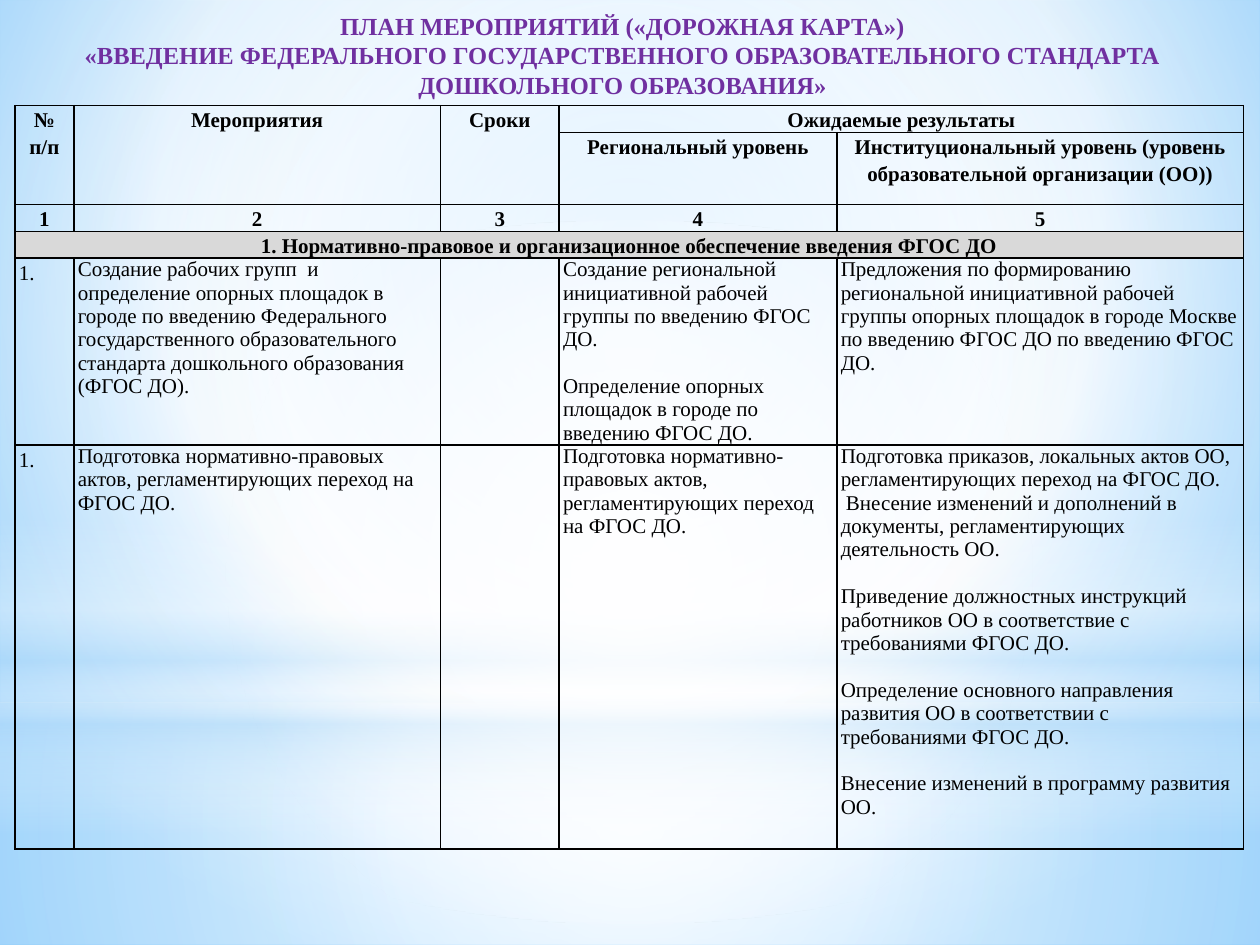
from lxml import etree
from pptx import Presentation
from pptx.dml.color import RGBColor
from pptx.enum.shapes import MSO_SHAPE
from pptx.enum.text import MSO_ANCHOR, PP_ALIGN
from pptx.oxml.ns import qn
from pptx.util import Cm, Pt

CENTER, LEFT = PP_ALIGN.CENTER, PP_ALIGN.LEFT
MIDDLE = MSO_ANCHOR.MIDDLE
RECTANGLE, OVAL = MSO_SHAPE.RECTANGLE, MSO_SHAPE.OVAL
BLACK = RGBColor(0x00, 0x00, 0x00)
WHITE = RGBColor(0xFF, 0xFF, 0xFF)
PURPLE = RGBColor(0x70, 0x30, 0xA0)
GREY = RGBColor(0xD9, 0xD9, 0xD9)
PALE_BLUE = RGBColor(0xB4, 0xDC, 0xFA)
SKY_BLUE = RGBColor(0x9E, 0xD5, 0xFF)
DEEP_BLUE = RGBColor(0x5B, 0xB9, 0xFF)
FONT = "Times New Roman"

COLUMN_WIDTHS = [1.19, 7.39, 2.39, 5.6, 8.2]
ROW_HEIGHTS = [0.53, 1.45, 0.53, 0.53, 3.75, 8.14]
MERGES = [(0, 0, 1, 0), (0, 1, 1, 1), (0, 2, 1, 2), (0, 3, 0, 4), (3, 0, 3, 4)]
PARAGRAPH_GAP = 13.5

TITLE = [
    "ПЛАН МЕРОПРИЯТИЙ («ДОРОЖНАЯ КАРТА»)",
    "«ВВЕДЕНИЕ ФЕДЕРАЛЬНОГО ГОСУДАРСТВЕННОГО ОБРАЗОВАТЕЛЬНОГО СТАНДАРТА",
    "ДОШКОЛЬНОГО ОБРАЗОВАНИЯ»",
]
HEADER_ROWS = [
    ["№ п/п", "Мероприятия", "Сроки", "Ожидаемые результаты", ""],
    ["", "", "", "Региональный уровень",
     "Институциональный уровень (уровень образовательной организации (ОО))"],
    ["1", "2", "3", "4", "5"],
    ["1. Нормативно-правовое и организационное обеспечение введения ФГОС ДО",
     "", "", "", ""],
]
ACTS = "Подготовка нормативно-правовых актов, регламентирующих переход на ФГОС ДО."
BODY_ROWS = [
    [["1."],
     ["Создание рабочих групп  и определение опорных площадок в городе по введению "
      "Федерального государственного образовательного стандарта дошкольного "
      "образования (ФГОС ДО)."],
     [],
     ["Создание региональной инициативной рабочей группы по введению ФГОС ДО.",
      "Определение опорных площадок в городе по введению ФГОС ДО."],
     ["Предложения по формированию региональной инициативной рабочей группы опорных "
      "площадок в городе Москве по введению ФГОС ДО по введению ФГОС ДО."]],
    [["1."], [ACTS], [], [ACTS],
     ["Подготовка приказов, локальных актов ОО, регламентирующих переход на ФГОС ДО.",
      " Внесение изменений и дополнений в документы, регламентирующих "
      "деятельность ОО.",
      "Приведение должностных инструкций работников ОО в соответствие с "
      "требованиями ФГОС ДО.",
      "Определение основного направления развития ОО в соответствии с "
      "требованиями ФГОС ДО.",
      "Внесение изменений в программу развития ОО."]],
]


def set_gradient(fill, element, stops, focus=None):
    fill.solid()
    solid = next(element.iter(qn("a:solidFill")))
    gradient = etree.Element(qn("a:gradFill"), rotWithShape="1")
    stop_list = etree.SubElement(gradient, qn("a:gsLst"))
    for position, color, opacity in stops:
        stop = etree.SubElement(stop_list, qn("a:gs"), pos=str(position * 1000))
        tint = etree.SubElement(stop, qn("a:srgbClr"), val=str(color))
        etree.SubElement(tint, qn("a:alpha"), val=str(opacity * 1000))
    if focus:
        shade = etree.SubElement(gradient, qn("a:path"), path="circle")
        sides = {side: str(share * 1000) for side, share in zip("ltrb", focus)}
        etree.SubElement(shade, qn("a:fillToRect"), **sides)
    else:
        etree.SubElement(gradient, qn("a:lin"), ang="5400000", scaled="0")
    solid.getparent().replace(solid, gradient)


def add_glow(page, kind, top, height, stops, focus=None):
    glow = page.shapes.add_shape(kind, Cm(0), Cm(top), Cm(25.4), Cm(height))
    glow.shadow.inherit = False
    glow.line.fill.background()
    set_gradient(glow.fill, glow._element.spPr, stops, focus)


def add_backdrop(page):
    center = (50, 50, 50, 50)
    set_gradient(page.background.fill, page._element,
                 [(0, SKY_BLUE, 100), (60, WHITE, 100), (100, DEEP_BLUE, 100)],
                 (20, 10, 20, 60))
    add_glow(page, RECTANGLE, 14.17, 4.88,
             [(0, WHITE, 91), (37, WHITE, 76), (100, PALE_BLUE, 79)], center)
    add_glow(page, RECTANGLE, 0, 14.17,
             [(0, WHITE, 89), (48, WHITE, 62), (100, PALE_BLUE, 79)], center)
    add_glow(page, RECTANGLE, 10.46, 6.35,
             [(0, WHITE, 0), (29, WHITE, 30), (45, PALE_BLUE, 40),
              (55, WHITE, 26), (65, PALE_BLUE, 60), (100, WHITE, 0)])
    add_glow(page, OVAL, 4.45, 14.17, [(0, WHITE, 100), (56, WHITE, 0)], center)


def style_paragraph(para, size, color, bold, align):
    para.alignment = align
    para.font.name = FONT
    para.font.size = Pt(size)
    para.font.bold = bold
    para.font.color.rgb = color


def add_title(page):
    box = page.shapes.add_textbox(Cm(0), Cm(0.08), Cm(25.1), Cm(2.06))
    frame = box.text_frame
    frame.word_wrap = True
    frame.vertical_anchor = MIDDLE
    frame.text = "\n".join(TITLE)
    for para in frame.paragraphs:
        style_paragraph(para, 14, PURPLE, True, CENTER)


def set_borders(cell):
    properties = cell._tc.get_or_add_tcPr()
    for side in ("a:lnL", "a:lnR", "a:lnT", "a:lnB"):
        line = etree.SubElement(properties, qn(side), w=str(Pt(1)))
        fill = etree.SubElement(line, qn("a:solidFill"))
        etree.SubElement(fill, qn("a:srgbClr"), val=str(BLACK))


def prepare_cell(cell):
    cell.margin_left = cell.margin_right = Cm(0.08)
    cell.margin_top = cell.margin_bottom = 0
    set_borders(cell)
    cell.fill.background()
    style_paragraph(cell.text_frame.paragraphs[0], 12, BLACK, False, LEFT)


def write_header(cell, text):
    cell.text = text
    para = cell.text_frame.paragraphs[0]
    style_paragraph(para, 12, BLACK, True, CENTER)
    para.line_spacing = 1.15


def write_body(cell, lines):
    cell.text = "\n".join(lines)
    for index, para in enumerate(cell.text_frame.paragraphs):
        style_paragraph(para, 12, BLACK, False, LEFT)
        if index and not para.text.startswith(" "):
            para.space_before = Pt(PARAGRAPH_GAP)


def add_plan_table(page):
    frame = page.shapes.add_table(
        len(ROW_HEIGHTS), len(COLUMN_WIDTHS), Cm(0.3), Cm(2.13),
        Cm(sum(COLUMN_WIDTHS)), Cm(sum(ROW_HEIGHTS)))
    table = frame.table
    table.first_row = table.horz_banding = False
    for column, width in zip(table.columns, COLUMN_WIDTHS):
        column.width = Cm(width)
    for row, height in zip(table.rows, ROW_HEIGHTS):
        row.height = Cm(height)
    for cell in table.iter_cells():
        prepare_cell(cell)
    for top, left, bottom, right in MERGES:
        table.cell(top, left).merge(table.cell(bottom, right))
    for row, texts in enumerate(HEADER_ROWS):
        for column, text in enumerate(texts):
            if text:
                write_header(table.cell(row, column), text)
    for row, entries in enumerate(BODY_ROWS, len(HEADER_ROWS)):
        for column, lines in enumerate(entries):
            if lines:
                write_body(table.cell(row, column), lines)
        table.cell(row, 0).text_frame.paragraphs[0].line_spacing = 1.15
    section = table.cell(3, 0)
    section.fill.solid()
    section.fill.fore_color.rgb = GREY


def main():
    deck = Presentation()
    deck.slide_width, deck.slide_height = Cm(25.4), Cm(19.05)
    page = deck.slides.add_slide(deck.slide_layouts[6])
    add_backdrop(page)
    add_plan_table(page)
    add_title(page)
    deck.save("out.pptx")


if __name__ == "__main__":
    main()
